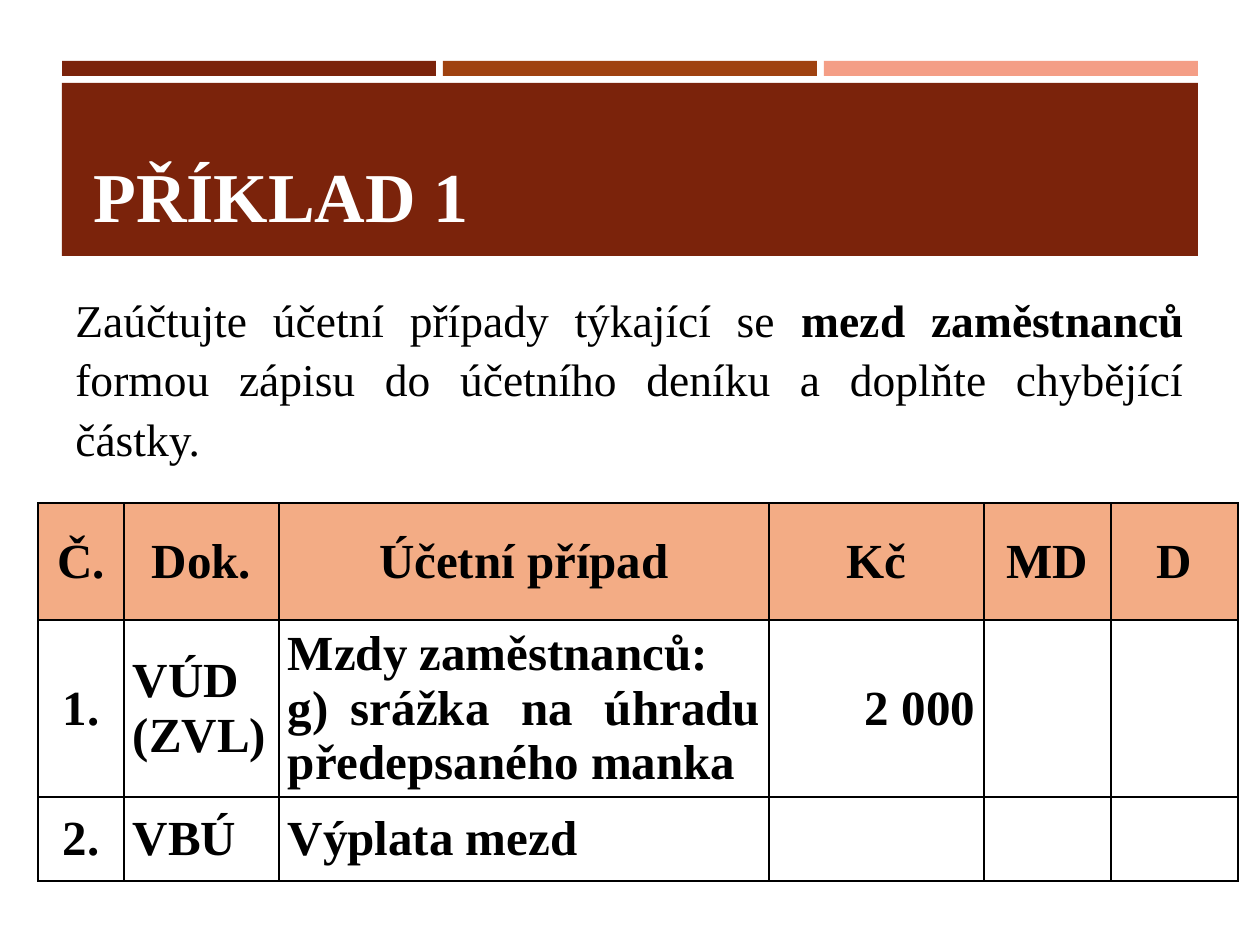
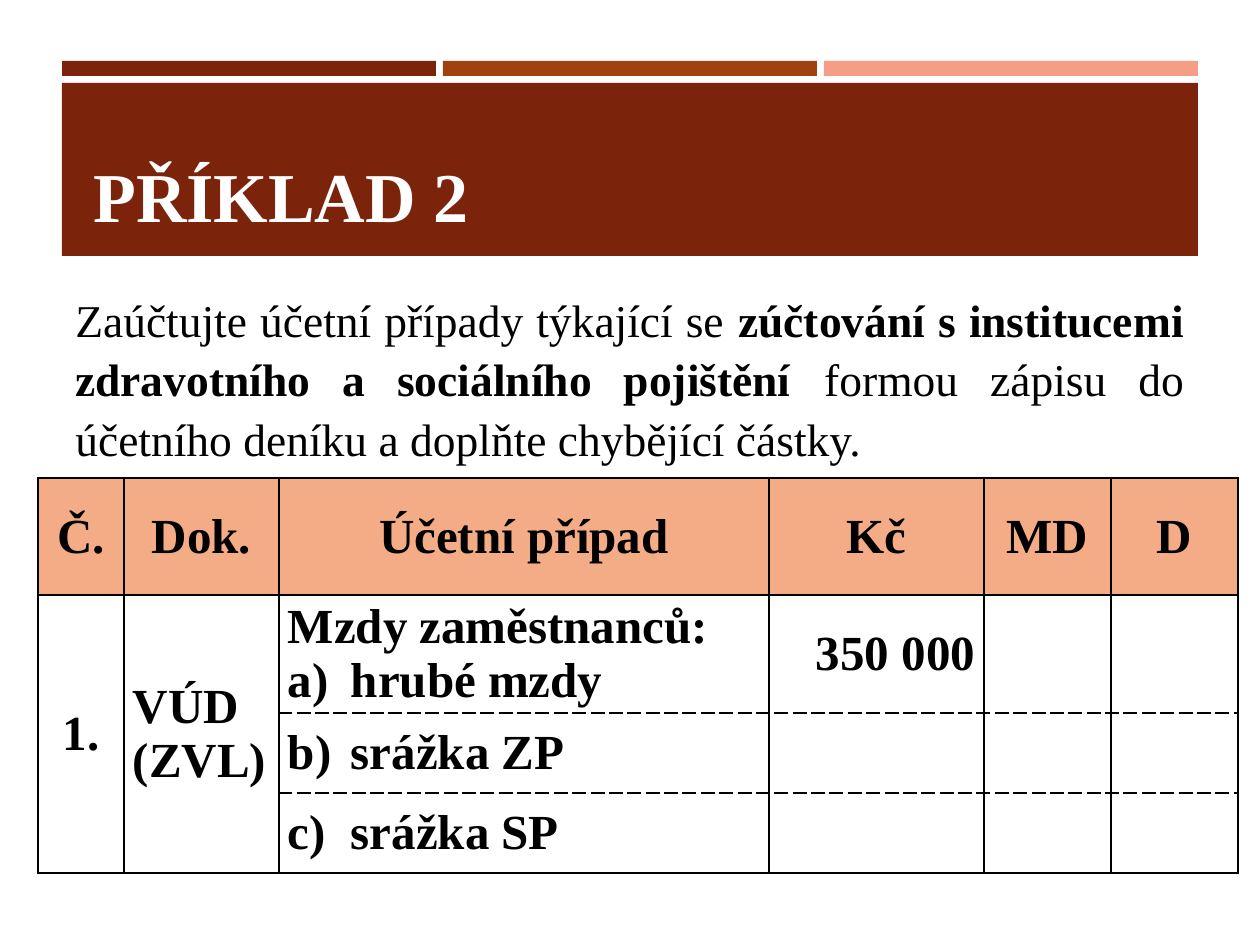
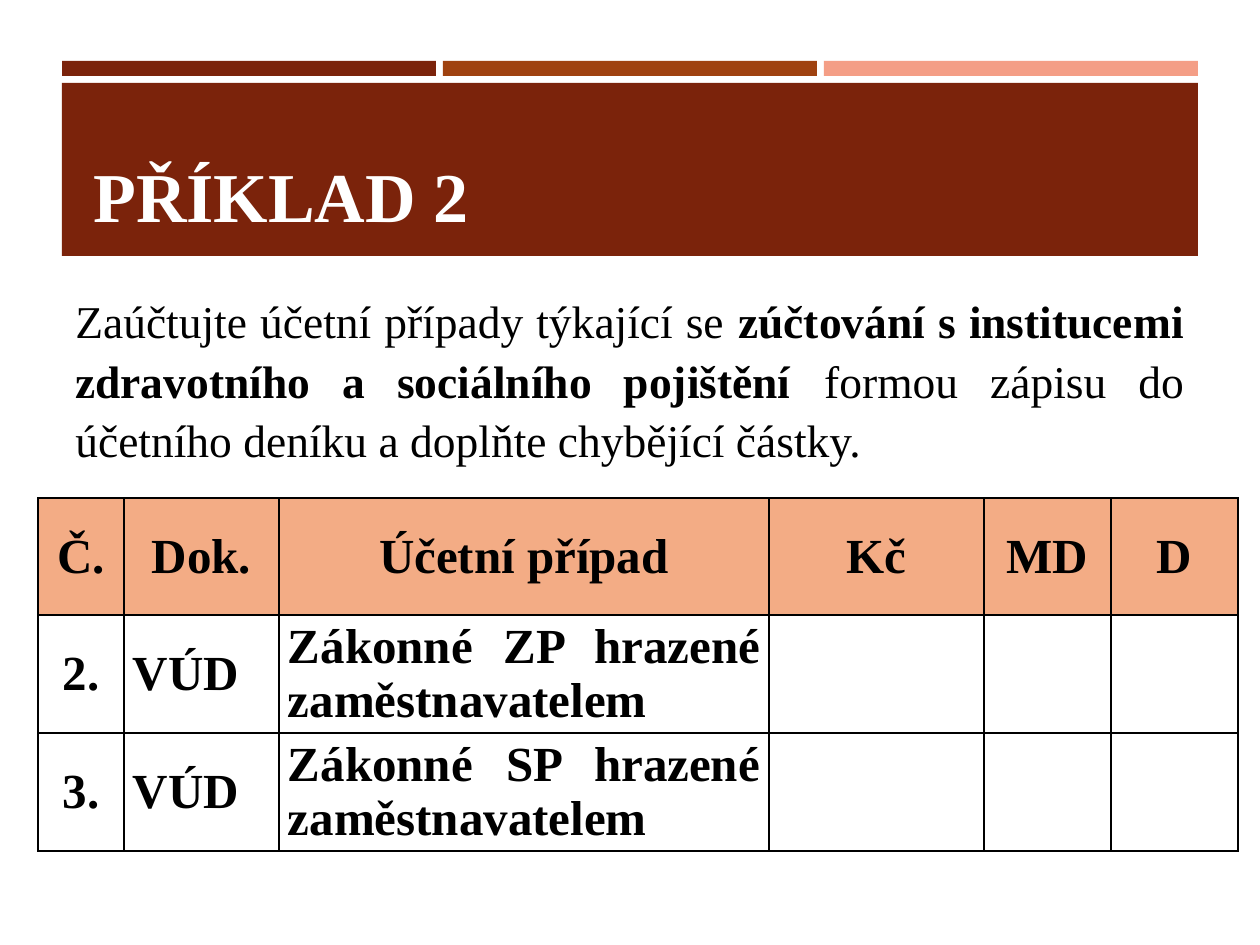
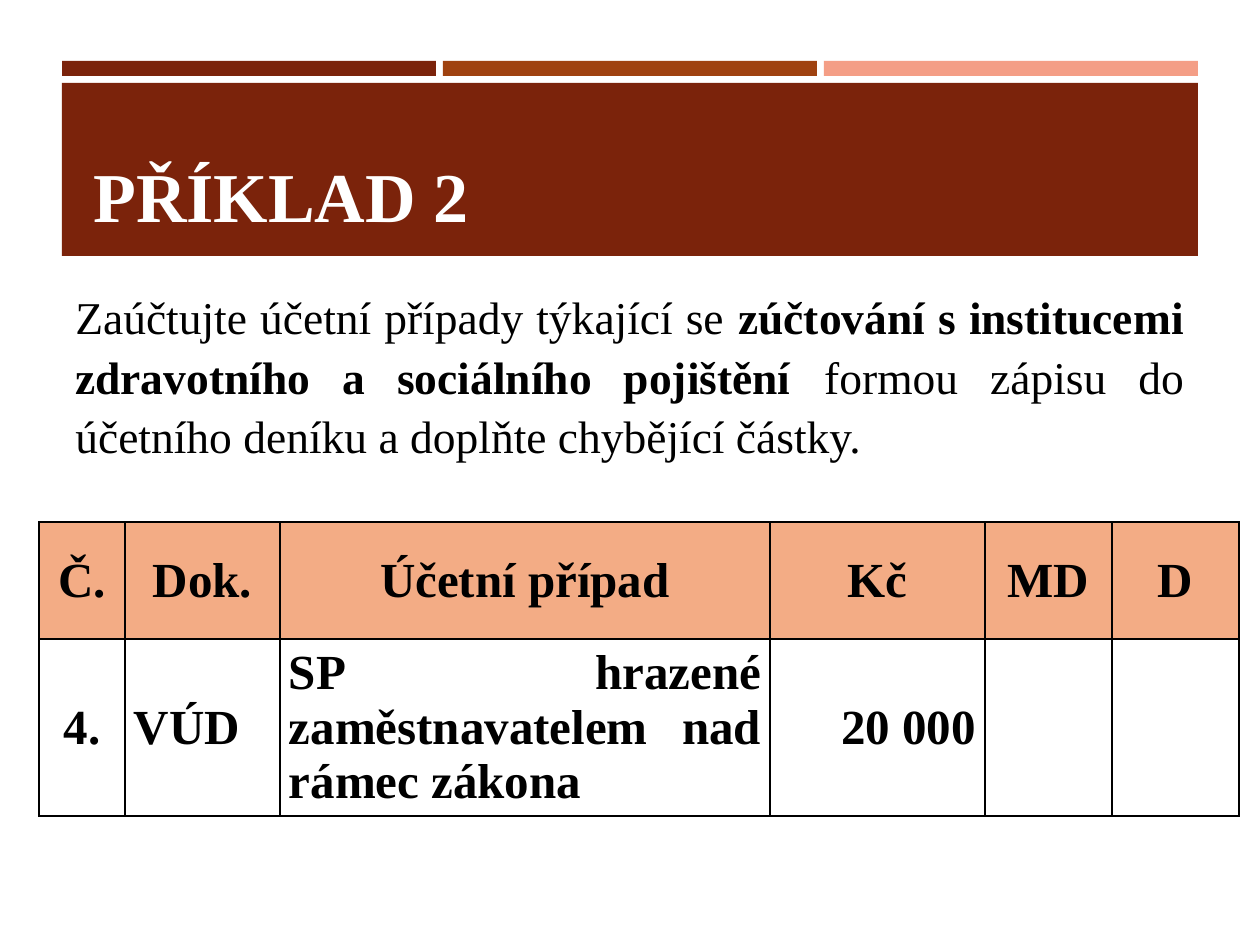
"""Build four accounting exercise slides with a shared title band and journal tables."""
import lxml.etree
import pptx
import pptx.dml.color
import pptx.enum.shapes
import pptx.enum.text
import pptx.oxml.ns
import pptx.util

PX = 7257
FONT = "Times New Roman"
DARK, BROWN, SALMON, PEACH = "7B230B", "9F4210", "F49E86", "F3AC85"
BLACK, WHITE = "000000", "FFFFFF"
ALIGN = pptx.enum.text.PP_ALIGN
MIDDLE = pptx.enum.text.MSO_ANCHOR.MIDDLE
TAB_STOP = 63

COLUMN_WIDTHS = [86, 155, 490, 215, 127, 127]
COLUMN_ALIGNMENTS = [ALIGN.CENTER, ALIGN.LEFT, ALIGN.JUSTIFY, ALIGN.RIGHT, ALIGN.CENTER, ALIGN.CENTER]
HEADER = ["Č.", "Dok.", "Účetní případ", "Kč", "MD", "D"]
HEADER_HEIGHT = 117
TASK = "Zaúčtujte účetní případy týkající se **{} **formou zápisu do účetního deníku a doplňte chybějící částky."
WAGES = TASK.format("mezd zaměstnanců")
INSURANCE = TASK.format("zúčtování s institucemi zdravotního a sociálního pojištění")

EXERCISES = [
    {"title": "PŘÍKLAD 1", "task": WAGES, "task_top": 281, "table_at": (38, 503), "heights": [177, 84],
     "rows": [["1.", "VÚD\n(ZVL)", "Mzdy zaměstnanců:\ng)\tsrážka na úhradu předepsaného manka", "2 000"],
              ["2.", "VBÚ", "Výplata mezd", ""]]},
    {"title": "PŘÍKLAD 2", "task": INSURANCE, "task_top": 281, "table_at": (38, 478), "heights": [118, 80, 80],
     "rows": [["1.", "VÚD\n(ZVL)", "Mzdy zaměstnanců:\na)\thrubé mzdy", "350 000"],
              ["", "", "b)\tsrážka ZP", ""],
              ["", "", "c)\tsrážka SP", ""]]},
    {"title": "PŘÍKLAD 2", "task": INSURANCE, "task_top": 282, "table_at": (38, 498), "heights": [118, 118],
     "rows": [["2.", "VÚD", "Zákonné ZP hrazené zaměstnavatelem", ""],
              ["3.", "VÚD", "Zákonné SP hrazené zaměstnavatelem", ""]]},
    {"title": "PŘÍKLAD 2", "task": INSURANCE, "task_top": 278, "table_at": (39, 522), "heights": [177],
     "rows": [["4.", "VÚD", "SP hrazené zaměstnavatelem nad rámec zákona", "20 000"]]},
]


def color(value):
    return pptx.dml.color.RGBColor.from_string(value)


def write(frame, text, size=28, fill=BLACK, bold=True, align=ALIGN.LEFT, spacing=1.0):
    for number, line in enumerate(text.split("\n")):
        paragraph = frame.add_paragraph() if number else frame.paragraphs[0]
        paragraph.alignment = align
        paragraph.line_spacing = spacing
        if "\t" in line:
            properties = paragraph._p.get_or_add_pPr()
            tabs = lxml.etree.SubElement(properties, pptx.oxml.ns.qn("a:tabLst"))
            lxml.etree.SubElement(tabs, pptx.oxml.ns.qn("a:tab"), pos=str(TAB_STOP * PX), algn="l")
        for part, words in enumerate(line.split("**")):
            run = paragraph.add_run()
            run.text = words
            run.font.name = FONT
            run.font.size = pptx.util.Pt(size)
            run.font.bold = bold or part % 2 == 1
            run.font.color.rgb = color(fill)


presentation = pptx.Presentation()
presentation.slide_width = pptx.util.Inches(10)
presentation.slide_height = pptx.util.Inches(7.5)

layout = presentation.slide_layouts[5]
for placeholder in list(layout.placeholders)[1:]:
    placeholder.element.getparent().remove(placeholder.element)
layout_title = layout.placeholders[0]
layout_title.left, layout_title.top = 81 * PX, 94 * PX
layout_title.width, layout_title.height = 1101 * PX, 149 * PX
layout_title.text_frame.vertical_anchor = pptx.enum.text.MSO_ANCHOR.BOTTOM

slides = [presentation.slides.add_slide(layout) for exercise in EXERCISES]

band_boxes = [(62 + 381 * index, 61, 374, 15, fill) for index, fill in enumerate([DARK, BROWN, SALMON])]
band_boxes.append((62, 83, 1136, 173, DARK))
bands = []
for left, top, width, height, fill in band_boxes:
    band = slides[0].shapes.add_shape(pptx.enum.shapes.MSO_SHAPE.RECTANGLE,
                                      left * PX, top * PX, width * PX, height * PX)
    band.shadow.inherit = False
    band.fill.solid()
    band.fill.fore_color.rgb = color(fill)
    band.line.fill.background()
    bands.append(band)
for band in bands:
    layout_title.element.addprevious(band.element)

for slide, exercise in zip(slides, EXERCISES):
    title_frame = slide.shapes.title.text_frame
    title_frame.auto_size = pptx.enum.text.MSO_AUTO_SIZE.NONE
    write(title_frame, exercise["title"], size=40, fill=WHITE)

    task = slide.shapes.add_textbox(63 * PX, exercise["task_top"] * PX, 1134 * PX, 178 * PX)
    task.text_frame.word_wrap = True
    task.text_frame.auto_size = pptx.enum.text.MSO_AUTO_SIZE.SHAPE_TO_FIT_TEXT
    write(task.text_frame, exercise["task"], size=26, bold=False, align=ALIGN.JUSTIFY, spacing=1.09)

    rows = [HEADER] + [row + ["", ""] for row in exercise["rows"]]
    heights = [HEADER_HEIGHT] + exercise["heights"]
    left, top = exercise["table_at"]
    table = slide.shapes.add_table(len(rows), len(HEADER), left * PX, top * PX,
                                   sum(COLUMN_WIDTHS) * PX, sum(heights) * PX).table
    table.first_row = table.horz_banding = False
    for column, width in zip(table.columns, COLUMN_WIDTHS):
        column.width = width * PX
    for table_row, height in zip(table.rows, heights):
        table_row.height = height * PX

    continued = [not row[0] for row in rows] + [False]
    for row_index, row in enumerate(rows):
        for column_index, text in enumerate(row):
            cell = table.cell(row_index, column_index)
            cell.vertical_anchor = MIDDLE
            cell.margin_left = cell.margin_right = 9 * PX
            cell.margin_top = cell.margin_bottom = 0
            if text:
                align = COLUMN_ALIGNMENTS[column_index] if row_index else ALIGN.CENTER
                write(cell.text_frame, text, align=align)
            dashed = {"T": continued[row_index], "B": continued[row_index + 1]}
            for side in "LRTB":
                line = lxml.etree.SubElement(cell._tc.get_or_add_tcPr(), pptx.oxml.ns.qn("a:ln" + side), w="12700")
                paint = lxml.etree.SubElement(line, pptx.oxml.ns.qn("a:solidFill"))
                lxml.etree.SubElement(paint, pptx.oxml.ns.qn("a:srgbClr"), val=BLACK)
                dash = "dash" if column_index > 1 and dashed.get(side) else "solid"
                lxml.etree.SubElement(line, pptx.oxml.ns.qn("a:prstDash"), val=dash)
            if row_index:
                cell.fill.background()
            else:
                cell.fill.solid()
                cell.fill.fore_color.rgb = color(PEACH)

    if any(continued):
        first, last = continued.index(True) - 1, len(rows) - 1
        for column_index in range(2):
            table.cell(first, column_index).merge(table.cell(last, column_index))

presentation.save("out.pptx")
